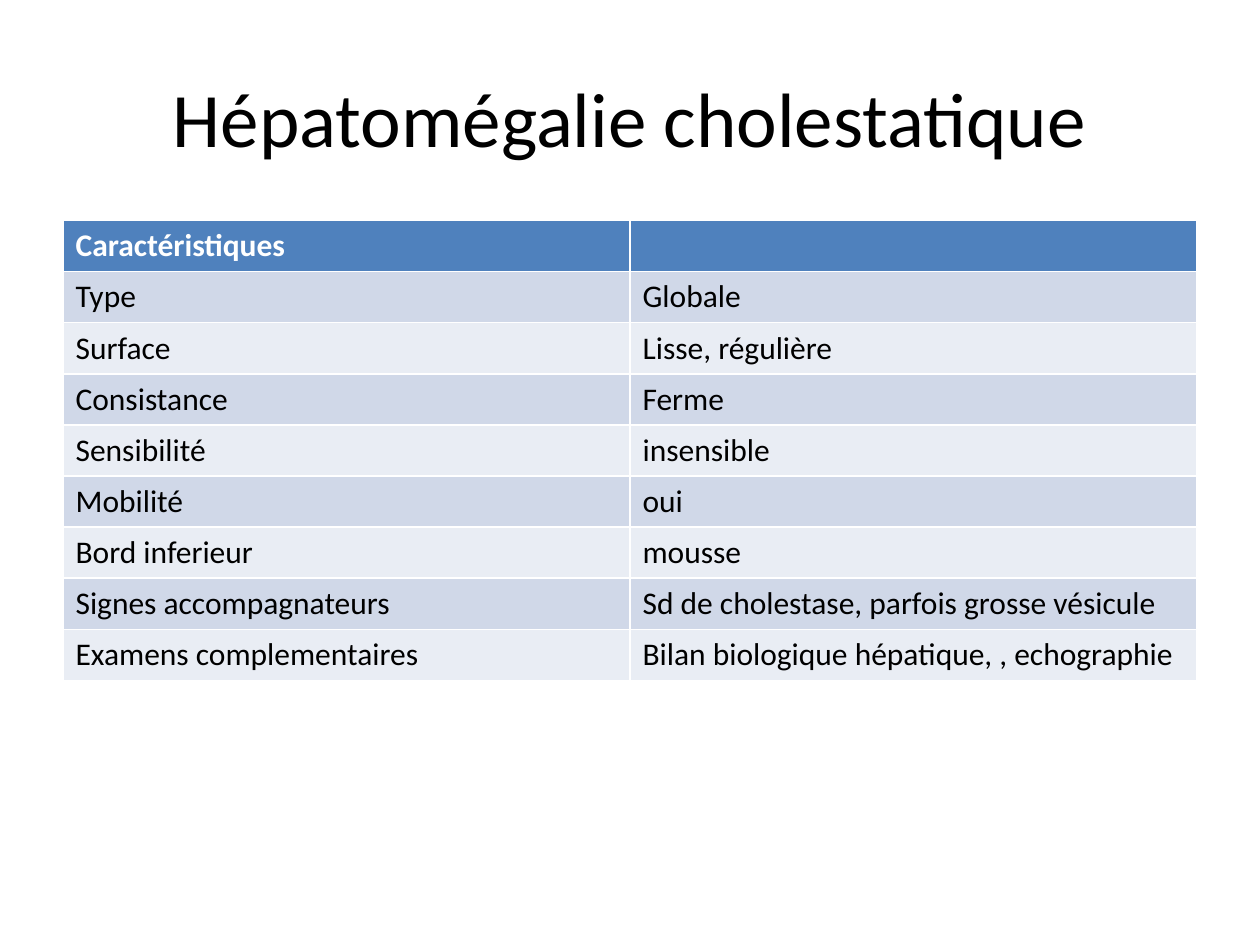
from pptx import Presentation
from pptx.dml.color import RGBColor
from pptx.enum.text import MSO_ANCHOR, PP_ALIGN
from pptx.util import Pt

TITLE = "Hépatomégalie cholestatique"
ROWS = [
    ("Caractéristiques", ""),
    ("Type", "Globale"),
    ("Surface", "Lisse, régulière"),
    ("Consistance", "Ferme"),
    ("Sensibilité", "insensible"),
    ("Mobilité", "oui"),
    ("Bord inferieur", "mousse"),
    ("Signes accompagnateurs", "Sd de cholestase, parfois grosse vésicule"),
    ("Examens complementaires", "Bilan biologique hépatique, , echographie"),
]

FONT = "Calibri"
BLACK = RGBColor(0x00, 0x00, 0x00)
WHITE = RGBColor(0xFF, 0xFF, 0xFF)
HEADER_FILL = RGBColor(0x4F, 0x81, 0xBD)
BAND_FILLS = (RGBColor(0xE9, 0xED, 0xF4), RGBColor(0xD0, 0xD8, 0xE8))

LEFT, WIDTH = 36, 648
TITLE_TOP, TITLE_HEIGHT = 21.6, 90
TABLE_TOP, ROW_HEIGHT = 126, 29.2


def style_font(paragraph, size, color, bold=False):
    for run in paragraph.runs:
        run.font.name = FONT
        run.font.size = Pt(size)
        run.font.color.rgb = color
        run.font.bold = bold


def add_title(slide):
    box = slide.shapes.add_textbox(Pt(LEFT), Pt(TITLE_TOP), Pt(WIDTH), Pt(TITLE_HEIGHT))
    frame = box.text_frame
    frame.word_wrap = True
    frame.vertical_anchor = MSO_ANCHOR.MIDDLE
    frame.text = TITLE
    paragraph = frame.paragraphs[0]
    paragraph.alignment = PP_ALIGN.CENTER
    style_font(paragraph, 44, BLACK)


def add_characteristics_table(slide):
    """Add the table; its default style supplies the white cell borders."""
    table = slide.shapes.add_table(
        len(ROWS), len(ROWS[0]), Pt(LEFT), Pt(TABLE_TOP),
        Pt(WIDTH), Pt(ROW_HEIGHT * len(ROWS))).table
    for row_index, texts in enumerate(ROWS):
        is_header = row_index == 0
        for column_index, text in enumerate(texts):
            cell = table.cell(row_index, column_index)
            cell.text = text
            cell.fill.solid()
            cell.fill.fore_color.rgb = HEADER_FILL if is_header else BAND_FILLS[row_index % 2]
            style_font(cell.text_frame.paragraphs[0], 18,
                       WHITE if is_header else BLACK, bold=is_header)


def main():
    presentation = Presentation()
    presentation.slide_width, presentation.slide_height = Pt(720), Pt(540)
    slide = presentation.slides.add_slide(presentation.slide_layouts[6])
    add_title(slide)
    add_characteristics_table(slide)
    presentation.save("out.pptx")


if __name__ == "__main__":
    main()
